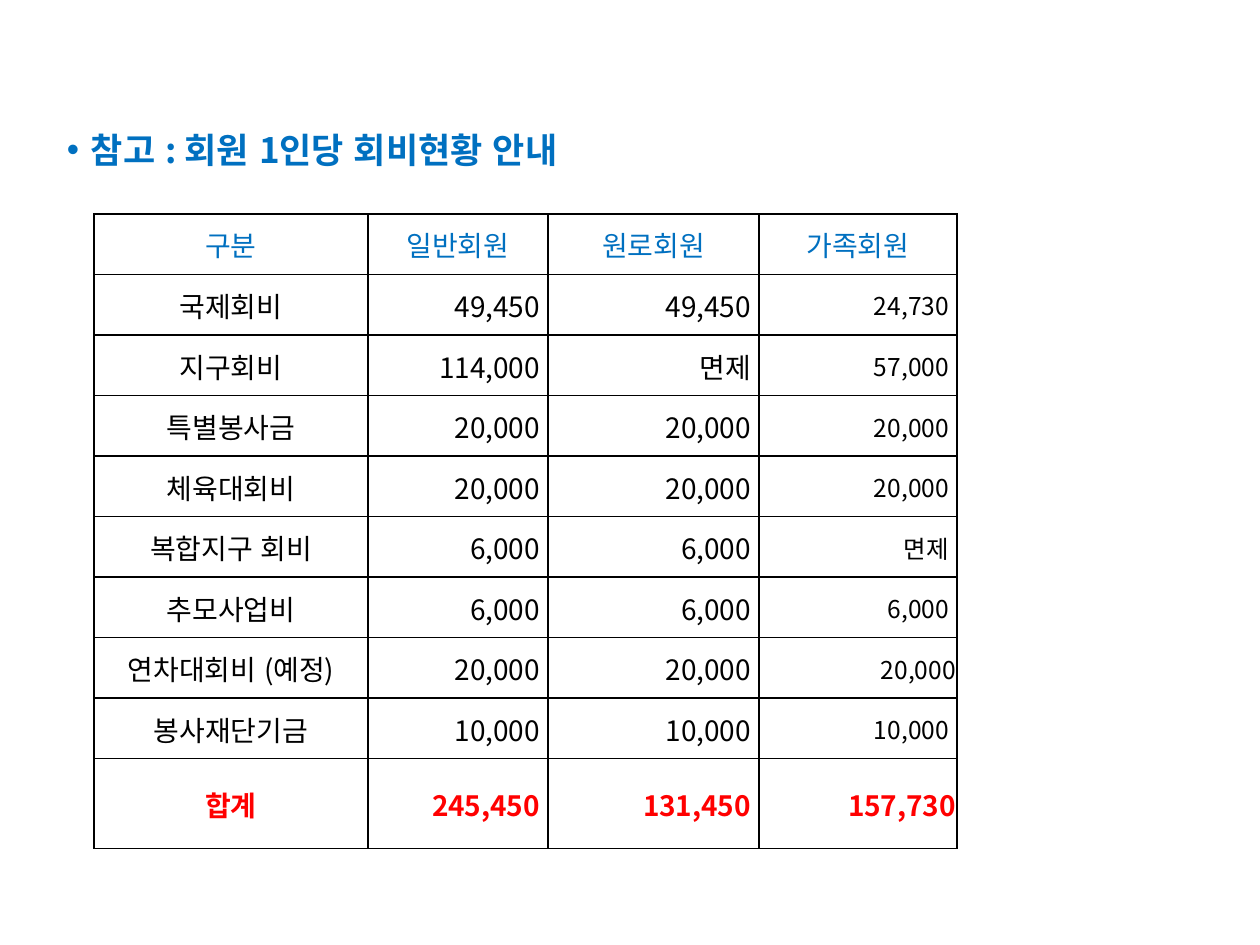
import pptx
import pptx.dml.color
import pptx.enum.lang
import pptx.enum.text
import pptx.oxml
import pptx.oxml.ns
import pptx.util

RGBColor = pptx.dml.color.RGBColor
ALIGN = pptx.enum.text.PP_ALIGN
BLUE = RGBColor(0x00, 0x70, 0xC0)
BLACK = RGBColor(0x00, 0x00, 0x00)
RED = RGBColor(0xFF, 0x00, 0x00)

FONT = "Noto Sans CJK KR"
PX_PER_INCH = 126

COLUMN_WIDTHS = [274, 180, 211, 198]
BODY_HEIGHT = 545  # shared by all rows above the total
TOTAL_HEIGHT = 90
FEES = [
    ["구분", "일반회원", "원로회원", "가족회원"],
    ["국제회비", "49,450", "49,450", "24,730"],
    ["지구회비", "114,000", "면제", "57,000"],
    ["특별봉사금", "20,000", "20,000", "20,000"],
    ["체육대회비", "20,000", "20,000", "20,000"],
    ["복합지구 회비", "6,000", "6,000", "면제"],
    ["추모사업비", "6,000", "6,000", "6,000"],
    ["연차대회비 (예정)", "20,000", "20,000", "20,000"],
    ["봉사재단기금", "10,000", "10,000", "10,000"],
    ["합계", "245,450", "131,450", "157,730"],
]
TOTAL_ROW = len(FEES) - 1
FLUSH_CELLS = {(7, 3), (TOTAL_ROW, 3)}  # figures set tight to the right border


def px(n):
    return pptx.util.Emu(round(n * 914400 / PX_PER_INCH))


def set_attrs(obj, values):
    for name, value in values.items():
        setattr(obj, name, value)


def add_xml(parent, tag, body="", attrs=""):
    ns = pptx.oxml.ns.nsdecls("a")
    parent.append(pptx.oxml.parse_xml(f"<a:{tag} {ns} {attrs}>{body}</a:{tag}>"))


def write(p, text, size, color, bold=False):
    r = p.add_run()
    r.text = text
    set_attrs(r.font, {
        "name": FONT,
        "size": pptx.util.Pt(size),
        "bold": bold,
        "language_id": pptx.enum.lang.MSO_LANGUAGE_ID.KOREAN,
    })
    r.font.color.rgb = color
    add_xml(r.font._element, "ea", attrs=f'typeface="{FONT}"')


def add_heading(slide, text):
    sp = slide.shapes.add_textbox(px(67), px(129), px(1108), px(52))
    tf = sp.text_frame
    set_attrs(tf, {"word_wrap": True, "margin_left": 0, "margin_right": 0,
                   "margin_top": 0, "margin_bottom": 0})
    p = tf.paragraphs[0]
    write(p, text, 20, BLUE, True)
    # Hanging bullet
    pPr = p._p.get_or_add_pPr()
    pPr.set("marL", str(px(24)))
    pPr.set("indent", str(-px(24)))
    add_xml(pPr, "buFont", attrs='typeface="Arial"')
    add_xml(pPr, "buChar", attrs='char="•"')


def add_borders(cell):
    tcPr = cell._tc.get_or_add_tcPr()
    line = f'<a:solidFill><a:srgbClr val="{BLACK}"/></a:solidFill>'
    for side in ("lnL", "lnR", "lnT", "lnB"):
        add_xml(tcPr, side, line, f'w="{pptx.util.Pt(1)}"')


def fill_cell(cell, text, row, col):
    header, total = row == 0, row == TOTAL_ROW
    figure = not header and col > 0
    add_borders(cell)
    cell.fill.background()
    set_attrs(cell, {
        "margin_left": px(1),
        "margin_right": px(8 if figure and (row, col) not in FLUSH_CELLS else 1),
        "margin_top": px(1),
        "margin_bottom": 0,
        "vertical_anchor": pptx.enum.text.MSO_ANCHOR.MIDDLE,
    })
    p = cell.text_frame.paragraphs[0]
    p.alignment = ALIGN.RIGHT if figure else ALIGN.CENTER
    size = 14 if col == 3 and not (header or total) else 16
    color = BLUE if header else RED if total else BLACK
    write(p, text, size, color, total)


def add_fee_table(slide):
    sp = slide.shapes.add_table(len(FEES), len(COLUMN_WIDTHS), px(94), px(214),
                                px(sum(COLUMN_WIDTHS)), px(BODY_HEIGHT + TOTAL_HEIGHT))
    table = sp.table
    set_attrs(table, {"first_row": False, "horz_banding": False})
    for column, width in zip(table.columns, COLUMN_WIDTHS):
        column.width = px(width)
    for i, values in enumerate(FEES):
        table.rows[i].height = px(TOTAL_HEIGHT if i == TOTAL_ROW else BODY_HEIGHT / TOTAL_ROW)
        for j, text in enumerate(values):
            fill_cell(table.cell(i, j), text, i, j)


def main():
    prs = pptx.Presentation()
    set_attrs(prs, {"slide_width": px(1260), "slide_height": px(945)})
    slide = prs.slides.add_slide(prs.slide_layouts[6])
    add_heading(slide, "참고 : 회원 1인당 회비현황 안내")
    add_fee_table(slide)
    prs.save("out.pptx")


if __name__ == "__main__":
    main()
